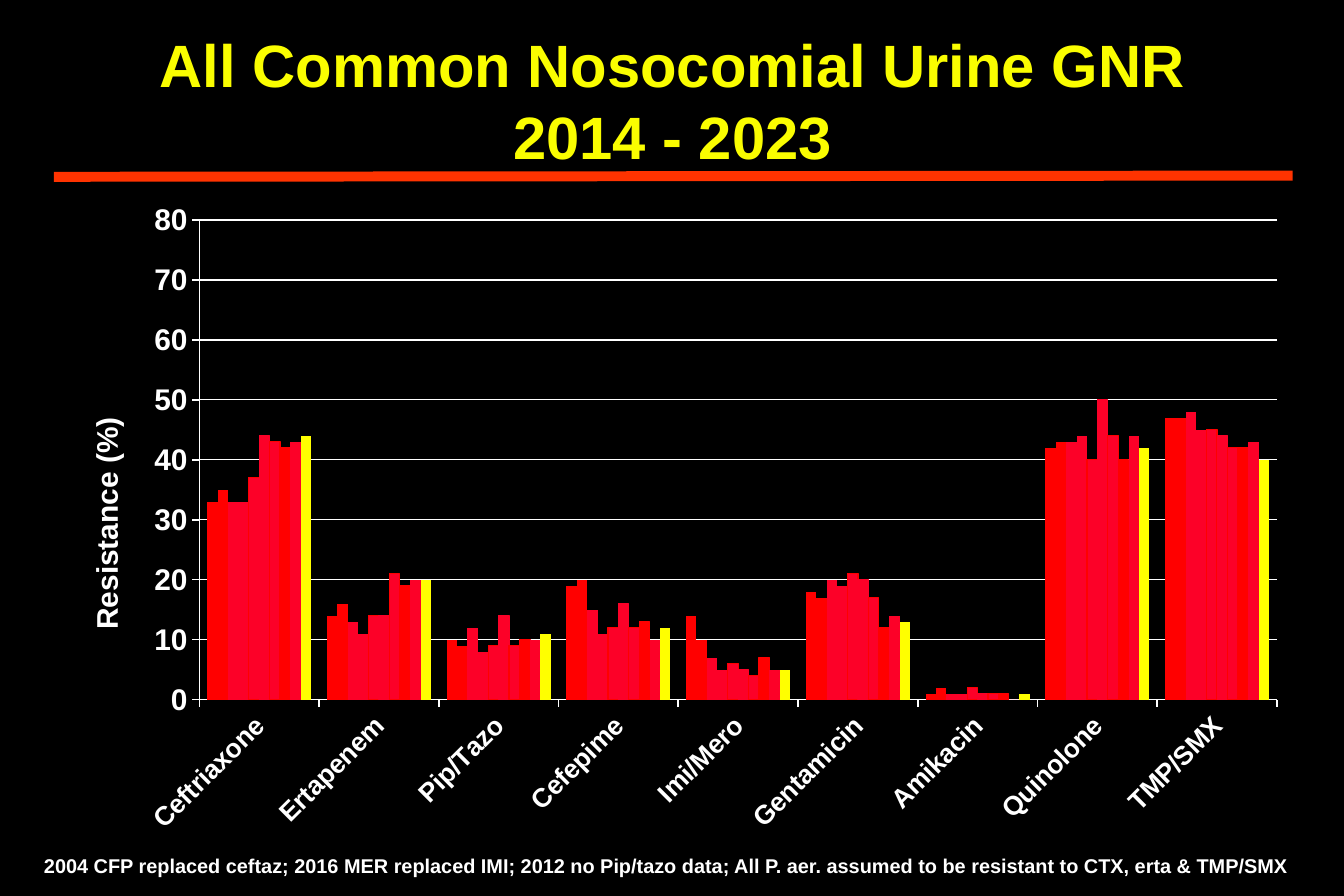
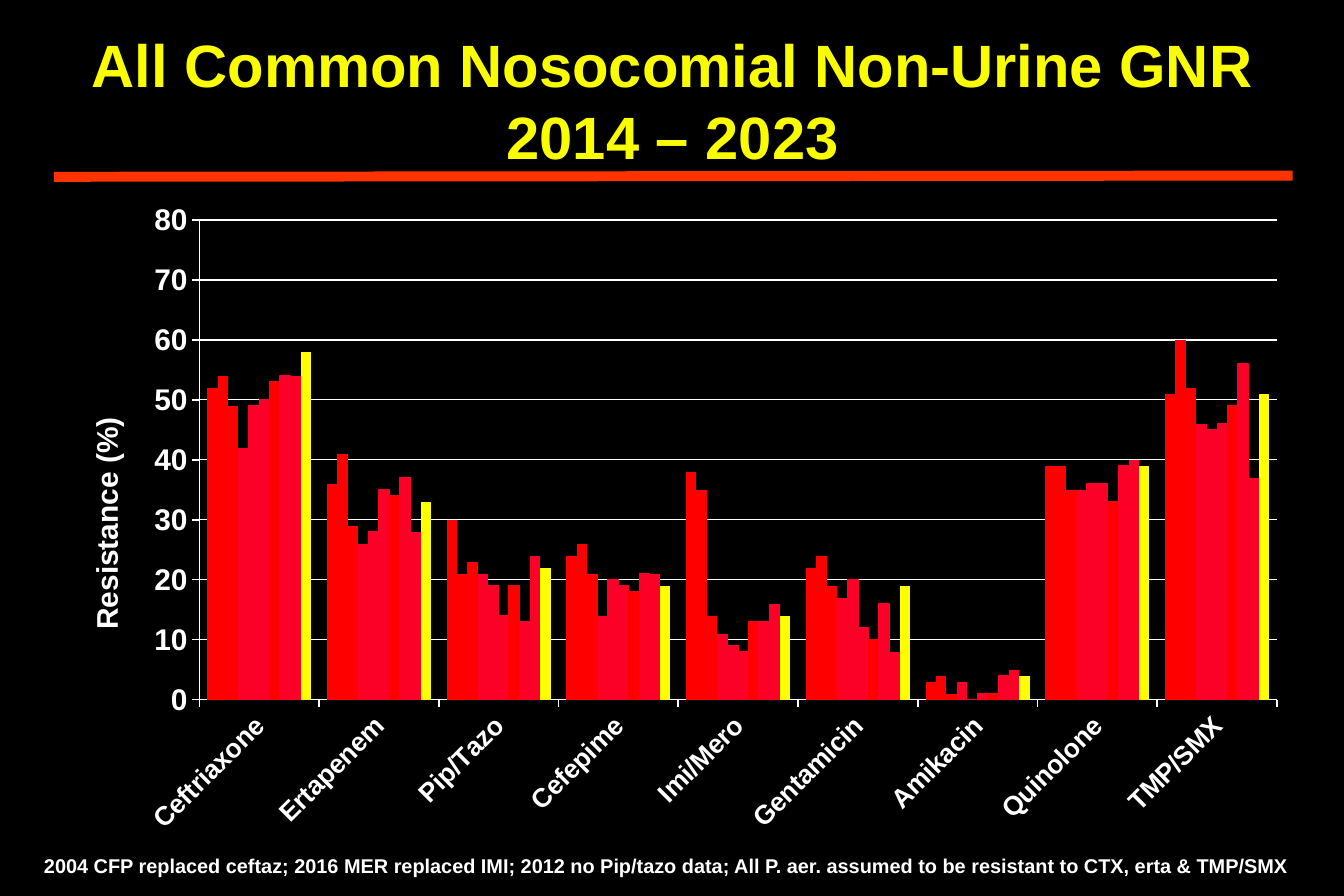
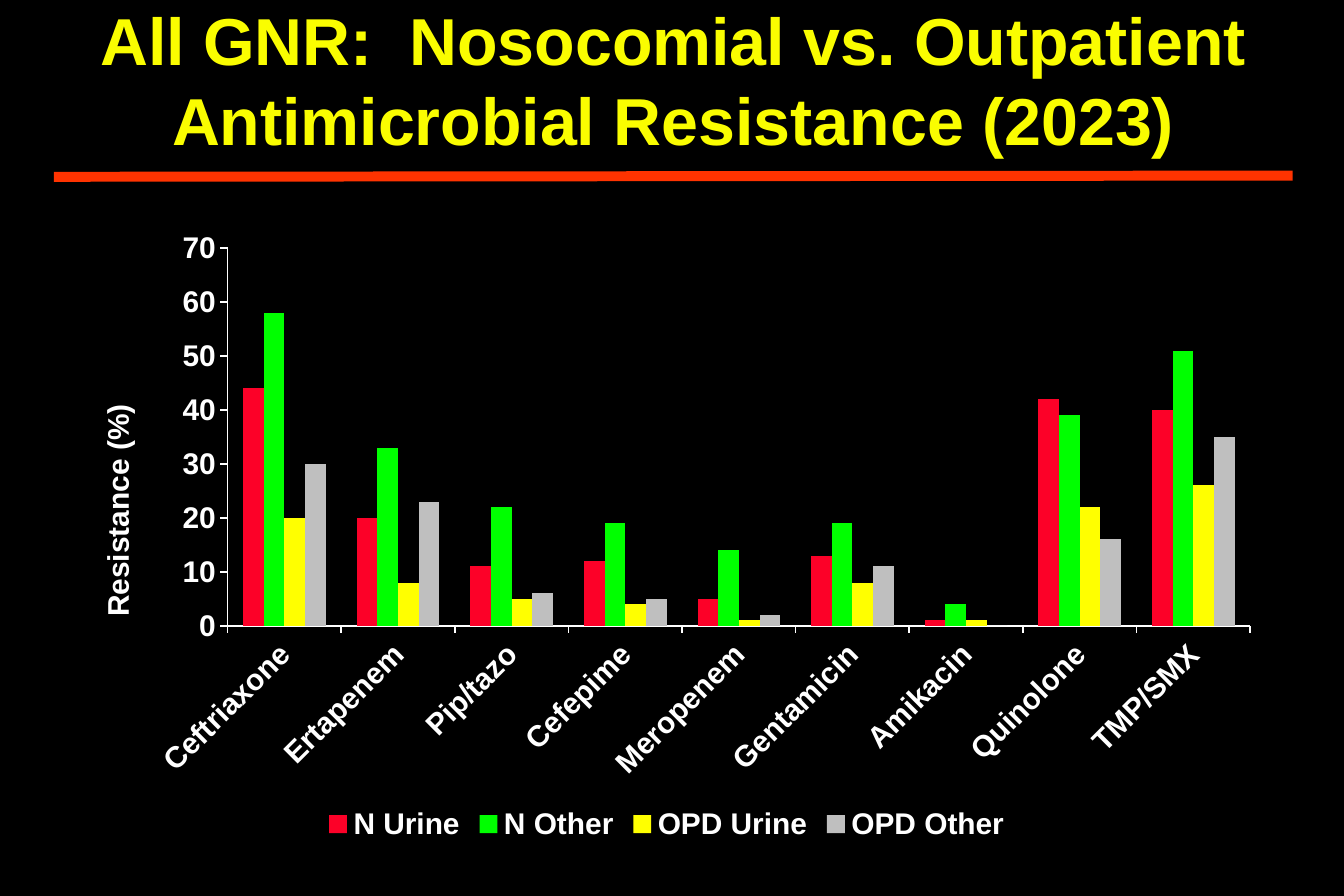
from pptx import Presentation
from pptx.chart.data import CategoryChartData
from pptx.dml.color import RGBColor
from pptx.enum.chart import XL_CHART_TYPE, XL_LEGEND_POSITION, XL_TICK_MARK
from pptx.enum.text import MSO_ANCHOR, MSO_AUTO_SIZE, PP_ALIGN
from pptx.oxml.ns import qn
from pptx.oxml.xmlchemy import OxmlElement
from pptx.util import Inches, Pt

FONT = "Arial"
BLACK, WHITE, TITLE_YELLOW, RULE_RED = "000000", "FFFFFF", "FAFD00", "FF3300"
RED, CRIMSON, YELLOW, GREEN, GREY = "FF0000", "FC0128", "FFFF00", "00FF00", "BFBFBF"

FOOTNOTE = ("2004 CFP replaced ceftaz; 2016 MER replaced IMI; 2012 no Pip/tazo data; "
            "All P. aer. assumed to be resistant to CTX, erta & TMP/SMX")
TREND_DRUGS = ["Ceftriaxone", "Ertapenem", "Pip/Tazo", "Cefepime", "Imi/Mero",
               "Gentamicin", "Amikacin", "Quinolone", "TMP/SMX"]
COMPARED_DRUGS = ["Ceftriaxone", "Ertapenem", "Pip/tazo", "Cefepime", "Meropenem",
                  "Gentamicin", "Amikacin", "Quinolone", "TMP/SMX"]

URINE = [
    (RED, None, [33, 14, 10, 19, 14, 18, 1, 42, 47]),
    (RED, None, [35, 16, 9, 20, 10, 17, 2, 43, 47]),
    (CRIMSON, None, [33, 13, 12, 15, 7, 20, 1, 43, 48]),
    (CRIMSON, None, [33, 11, 8, 11, 5, 19, 1, 44, 45]),
    (CRIMSON, RED, [37, 14, 9, 12, 6, 21, 2, 40, 45]),
    (CRIMSON, CRIMSON, [44, 14, 14, 16, 5, 20, 1, 50, 44]),
    (CRIMSON, RED, [43, 21, 9, 12, 4, 17, 1, 44, 42]),
    (RED, RED, [42, 19, 10, 13, 7, 12, 1, 40, 42]),
    (CRIMSON, None, [43, 20, 10, 10, 5, 14, 0, 44, 43]),
    (YELLOW, None, [44, 20, 11, 12, 5, 13, 1, 42, 40]),
]
NON_URINE = [
    (RED, None, [52, 36, 30, 24, 38, 22, 3, 39, 51]),
    (RED, None, [54, 41, 21, 26, 35, 24, 4, 39, 60]),
    (RED, None, [49, 29, 23, 21, 14, 19, 1, 35, 52]),
    (CRIMSON, None, [42, 26, 21, 14, 11, 17, 3, 35, 46]),
    (CRIMSON, CRIMSON, [49, 28, 19, 20, 9, 20, 0, 36, 45]),
    (CRIMSON, CRIMSON, [50, 35, 14, 19, 8, 12, 1, 36, 46]),
    (RED, RED, [53, 34, 19, 18, 13, 10, 1, 33, 49]),
    (CRIMSON, CRIMSON, [54, 37, 13, 21, 13, 16, 4, 39, 56]),
    (CRIMSON, None, [54, 28, 24, 21, 16, 8, 5, 40, 37]),
    (YELLOW, None, [58, 33, 22, 19, 14, 19, 4, 39, 51]),
]
COMPARED = [
    (CRIMSON, None, [44, 20, 11, 12, 5, 13, 1, 42, 40]),
    (GREEN, None, [58, 33, 22, 19, 14, 19, 4, 39, 51]),
    (YELLOW, None, [20, 8, 5, 4, 1, 8, 1, 22, 26]),
    (GREY, None, [30, 23, 6, 5, 2, 11, 0, 16, 35]),
]


def rgb(value):
    """Return the colour for a hex string."""
    return RGBColor.from_string(value)


def style_font(font, size, color=WHITE, bold=True):
    """Format any font object."""
    font.name, font.size, font.bold = FONT, Pt(size), bold
    font.color.rgb = rgb(color)


def set_text(tf, text, size, color=WHITE, align=PP_ALIGN.LEFT, anchor=MSO_ANCHOR.TOP):
    """Fill a text frame with one formatted paragraph."""
    tf.word_wrap, tf.auto_size, tf.vertical_anchor = True, MSO_AUTO_SIZE.NONE, anchor
    p = tf.paragraphs[0]
    p.text, p.alignment = text, align
    for r in p.runs:
        style_font(r.font, size, color)


def add_slide(prs, title, box, size):
    """Add a slide with its title and the red rule."""
    s = prs.slides.add_slide(prs.slide_layouts[5])
    rule = s.shapes.add_connector(1, Inches(0.45), Inches(1.48), Inches(10.82), Inches(1.47))
    rule.line.color.rgb, rule.line.width = rgb(RULE_RED), Pt(6)
    rule._element.spPr.append(OxmlElement("a:effectLst"))
    sp = s.shapes.title
    sp.left, sp.top, sp.width, sp.height = map(Inches, box)
    set_text(sp.text_frame, title, size, TITLE_YELLOW, PP_ALIGN.CENTER, MSO_ANCHOR.MIDDLE)
    return s


def place(parent, index, **values):
    """Give a chart part a manual layout in fractions of the chart."""
    layout = parent.find(qn("c:layout"))
    if layout is None:
        layout = OxmlElement("c:layout")
        parent.insert(index, layout)
    manual = OxmlElement("c:manualLayout")
    layout.append(manual)
    settings = {"xMode": "edge", "yMode": "edge", **values}
    if "w" in values:
        settings = {"layoutTarget": "inner", **settings}
    for name, value in settings.items():
        item = OxmlElement(f"c:{name}")
        item.set("val", str(value))
        manual.append(item)


def style_axis(axis, size):
    """Format the labels, ticks and line of an axis."""
    style_font(axis.tick_labels.font, size)
    axis.major_tick_mark, axis.minor_tick_mark = XL_TICK_MARK.OUTSIDE, XL_TICK_MARK.NONE
    axis.format.line.color.rgb, axis.format.line.width = rgb(WHITE), Pt(1)


def add_columns(s, box, drugs, names, series, plot, title_at, top, label_size, grid=False):
    """Add a clustered column chart of resistance and return it."""
    data = CategoryChartData(number_format="0")
    data.categories = drugs
    for name, (_, _, values) in zip(names, series):
        data.add_series(name, values)
    chart = s.shapes.add_chart(XL_CHART_TYPE.COLUMN_CLUSTERED, *map(Inches, box), data).chart
    style_font(chart.font, 18)
    chart.has_title = chart.has_legend = False
    bars = chart.plots[0]
    bars.gap_width, bars.overlap, bars.vary_by_categories = 150, 0, False
    for ser, (fill, line, _) in zip(bars.series, series):
        ser.format.fill.solid()
        ser.format.fill.fore_color.rgb = rgb(fill)
        if line:
            ser.format.line.color.rgb, ser.format.line.width = rgb(line), Pt(0.75)
    drug_axis, value_axis = chart.category_axis, chart.value_axis
    style_axis(drug_axis, label_size)
    drug_axis._element.txPr.find(qn("a:bodyPr")).set("rot", "-2700000")
    style_axis(value_axis, 18)
    value_axis.minimum_scale, value_axis.maximum_scale, value_axis.major_unit = 0, top, 10
    value_axis.has_major_gridlines = grid
    if grid:
        line = value_axis.major_gridlines.format.line
        line.color.rgb, line.width = rgb(WHITE), Pt(0.75)
    tf = value_axis.axis_title.text_frame
    tf.text = "Resistance (%)"
    style_font(tf.paragraphs[0].runs[0].font, 18)
    tf._txBody.find(qn("a:bodyPr")).set("rot", "-5400000")
    place(value_axis.axis_title._element, 1, **title_at)
    place(chart._chartSpace.chart.plotArea, 0, **plot)
    return chart


def add_trend_slide(prs, title, series):
    """Add a slide with ten yearly columns for each drug and a footnote."""
    s = add_slide(prs, title, (0.38, 0.25, 10.5, 1.17), 36)
    names = [f"Series {n}" for n in range(1, len(series) + 1)]
    add_columns(s, (0.41, 1.6, 10.49, 5.5), TREND_DRUGS, names, series,
                dict(x=0.12, y=0.044, w=0.86, h=0.73), dict(x=0.026, y=0.336),
                80, 16, grid=True)
    note = s.shapes.add_textbox(Inches(0.27), Inches(7.1), Inches(10.7), Inches(0.3))
    set_text(note.text_frame, FOOTNOTE, 12)


def add_comparison_slide(prs):
    """Add the slide that compares nosocomial and outpatient resistance."""
    s = add_slide(prs, "All GNR:  Nosocomial vs. Outpatient Antimicrobial Resistance (2023)",
                  (0.41, 0.08, 10.45, 1.16), 40)
    chart = add_columns(s, (0.49, 1.83, 10.18, 5.26), COMPARED_DRUGS,
                        ["N Urine", "N Other", "OPD Urine", "OPD Other"], COMPARED,
                        dict(x=0.139, y=0.047, w=0.841, h=0.601), dict(x=0.028, y=0.287),
                        70, 18)
    chart.has_legend = True
    chart.legend.position = XL_LEGEND_POSITION.BOTTOM
    chart.legend.include_in_layout = False
    style_font(chart.legend.font, 18)


def main():
    """Build and save the presentation."""
    prs = Presentation()
    prs.slide_width, prs.slide_height = Inches(11.25), Inches(7.5)
    background = prs.slide_master.background.fill
    background.solid()
    background.fore_color.rgb = rgb(BLACK)
    add_trend_slide(prs, "All Common Nosocomial Urine GNR\v2014 - 2023", URINE)
    add_trend_slide(prs, "All Common Nosocomial Non-Urine GNR\v2014 – 2023", NON_URINE)
    add_comparison_slide(prs)
    prs.save("out.pptx")


if __name__ == "__main__":
    main()
